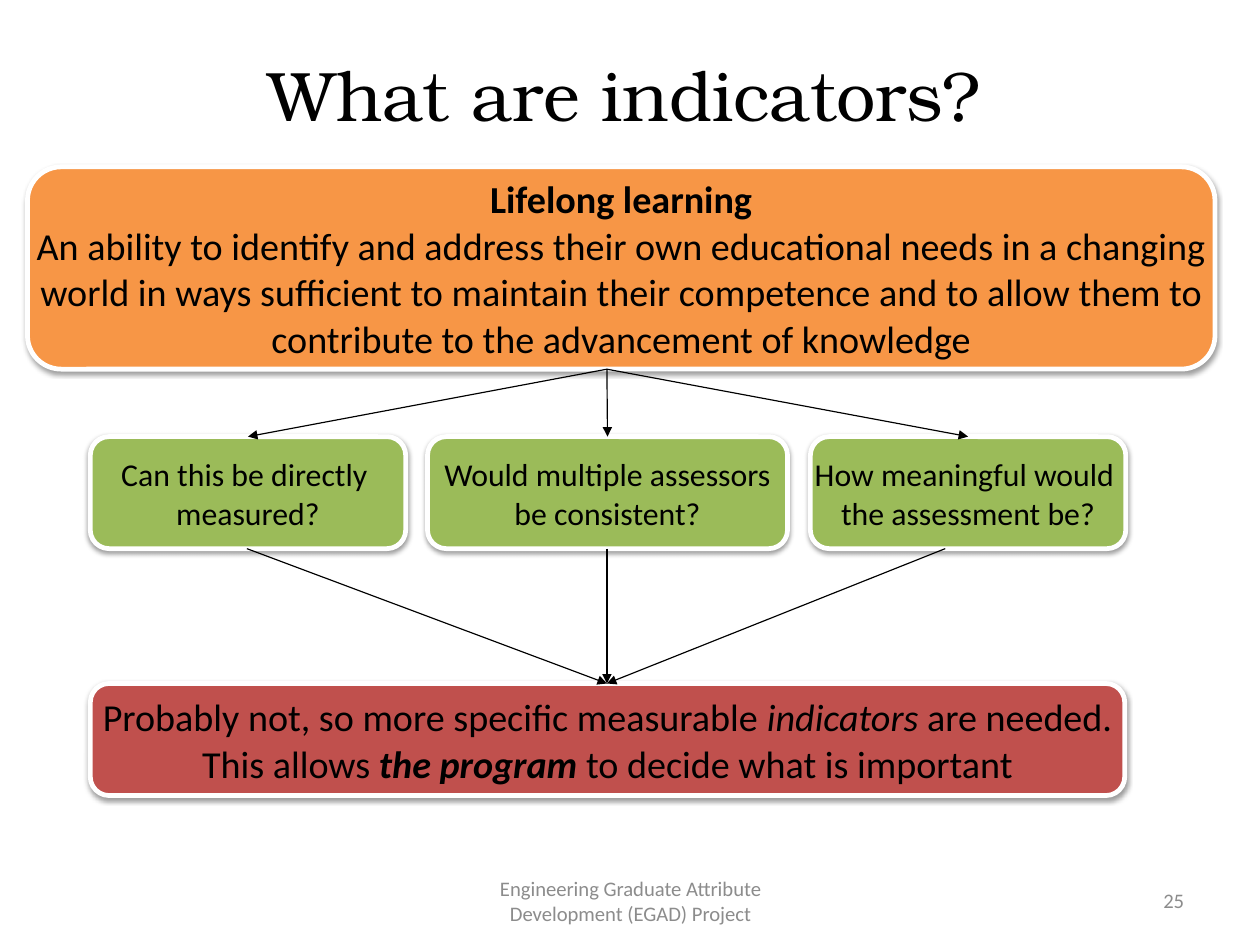
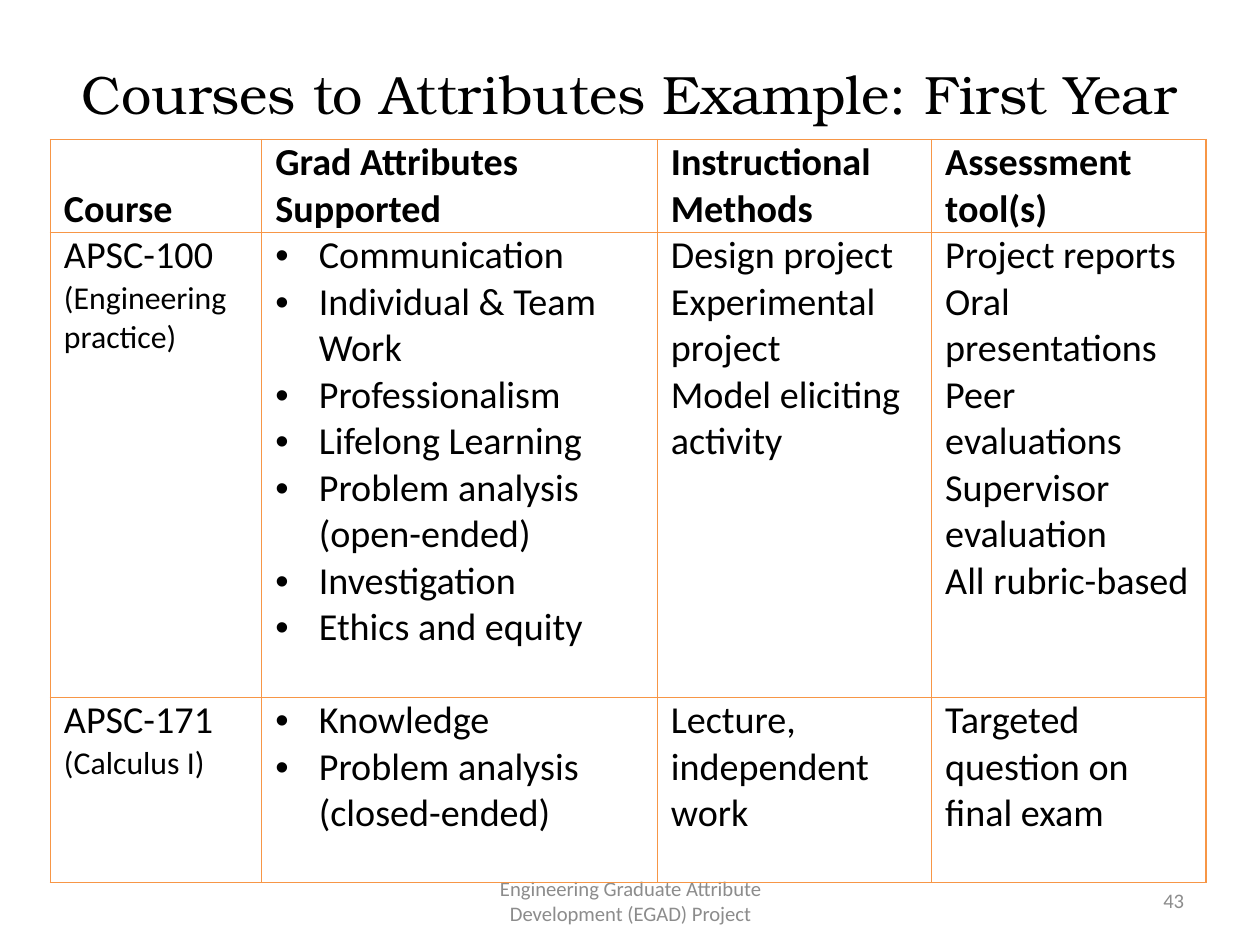
from dataclasses import dataclass

from lxml import etree
from pptx import Presentation
from pptx.dml.color import RGBColor
from pptx.enum import shapes, text
from pptx.oxml import ns
from pptx.util import Cm, Inches, Pt


@dataclass(frozen=True)
class Theme:
    ink: str = "000000"
    muted: str = "8C8C8C"
    white: str = "FFFFFF"
    orange: str = "F79646"
    green: str = "9BBB59"
    red: str = "C0504D"
    title_font: str = "TeX Gyre Bonum"
    body_font: str = "Calibri"
    body: int = 24
    small: int = 20
    footer: int = 13


T = Theme()
ALIGN = text.PP_ALIGN
ANCHOR = text.MSO_ANCHOR

FOOTER = "Engineering Graduate Attribute Development (EGAD) Project"

DEFINITION = [
    [("Lifelong learning", "b")],
    "An ability to identify and address their own educational needs in a changing",
    "world in ways sufficient to maintain their competence and to allow them to",
    "contribute to the advancement of knowledge",
]
QUESTIONS = [
    (0.79, 2.76, 2.16, ["Can this be directly ", "measured?"]),
    (3.74, 3.15, 5.31, ["Would multiple assessors", "be consistent?"]),
    (7.09, 2.76, 8.27, ["How meaningful would ", "the assessment be?"]),
]
ANSWER = [
    ["Probably not, so more specific measurable ", ("indicators", "i"), " are needed."],
    ["This allows ", ("the program", "bi"), " to decide what is important"],
]

HEADERS = ["Course", "Grad Attributes Supported", "Instructional Methods", "Assessment tool(s)"]
COURSES = [
    (
        [["APSC-100 ", ("(Engineering practice)", "s")]],
        ["Communication", "Individual & Team Work", "Professionalism", "Lifelong Learning",
         "Problem analysis (open-ended)", "Investigation", "Ethics and equity"],
        ["Design project", "Experimental project", "Model eliciting activity"],
        ["Project reports", "Oral presentations", "Peer evaluations",
         "Supervisor evaluation", "All rubric-based"],
    ),
    (
        [["APSC-171 ", ("(Calculus I)", "s")]],
        ["Knowledge", "Problem analysis (closed-ended)"],
        ["Lecture, independent work"],
        ["Targeted question on final exam"],
    ),
]
COLUMN_WIDTHS = [1.85, 3.46, 2.4, 2.4]
ROW_HEIGHTS = [0.81, 4.07, 1.62]
BULLET_COLUMN = 1


def rgb(value):
    return RGBColor.from_string(value)


def add_xml(parent, tag, **attrs):
    return etree.SubElement(parent, ns.qn(tag), attrs)


def set_margins(target, x, y):
    target.margin_left = target.margin_right = Inches(x)
    target.margin_top = target.margin_bottom = Inches(y)


def style_paragraph(p, size, color=T.ink, font=T.body_font, align=ALIGN.LEFT, bold=False):
    p.alignment = align
    p.font.size = Pt(size)
    p.font.name = font
    p.font.bold = bold
    p.font.color.rgb = rgb(color)


def add_bullet(p):
    pPr = p._p.get_or_add_pPr()
    indent = Inches(0.38)
    pPr.set("marL", str(indent))
    pPr.set("indent", str(-indent))
    add_xml(pPr, "a:buFont", typeface="Arial")
    add_xml(pPr, "a:buChar", char="•")


def write_lines(tf, lines, size, align=ALIGN.LEFT, bold=False, bullets=False, spacing=1.0):
    for i, line in enumerate(lines):
        p = tf.add_paragraph() if i else tf.paragraphs[0]
        p.line_spacing = spacing
        if bullets:
            add_bullet(p)
        style_paragraph(p, size, align=align, bold=bold)
        for part in [line] if isinstance(line, str) else line:
            words, marks = (part, "") if isinstance(part, str) else part
            r = p.add_run()
            r.text = words
            if "b" in marks:
                r.font.bold = True
            if "i" in marks:
                r.font.italic = True
            if "s" in marks:
                r.font.size = Pt(T.small)


def write_label(tf, words, **style):
    tf.word_wrap = True
    tf.auto_size = text.MSO_AUTO_SIZE.NONE
    tf.vertical_anchor = ANCHOR.MIDDLE
    set_margins(tf, 0.11, 0.06)
    p = tf.paragraphs[0]
    p.text = words
    style_paragraph(p, **style)


def add_slide(prs, title, title_box, title_size, number):
    s = prs.slides.add_slide(prs.slide_layouts[5])
    sp = s.shapes.title
    sp.left, sp.top, sp.width, sp.height = map(Inches, title_box)
    write_label(sp.text_frame, title, size=title_size, font=T.title_font, align=ALIGN.CENTER)
    for left, width, words, align in [(3.77, 3.49, FOOTER, ALIGN.CENTER),
                                      (7.9, 2.57, number, ALIGN.RIGHT)]:
        box = s.shapes.add_textbox(Inches(left), Inches(7.66), Inches(width), Inches(0.44))
        write_label(box.text_frame, words, size=T.footer, color=T.muted, align=align)
    return s


def add_card(s, left, top, width, height, fill, lines, size):
    sp = s.shapes.add_shape(shapes.MSO_SHAPE.ROUNDED_RECTANGLE,
                            *map(Inches, (left, top, width, height)))
    sp.fill.solid()
    sp.fill.fore_color.rgb = rgb(fill)
    sp.line.color.rgb = rgb(T.white)
    sp.line.width = Pt(3)
    sp.shadow.inherit = False
    effects = sp._element.spPr.find(ns.qn("a:effectLst"))
    shadow = add_xml(effects, "a:outerShdw", blurRad=str(Pt(3.1)), dist=str(Pt(1.6)),
                     dir="5400000", rotWithShape="0")
    add_xml(add_xml(shadow, "a:srgbClr", val=T.ink), "a:alpha", val="38000")
    tf = sp.text_frame
    tf.word_wrap = False
    tf.vertical_anchor = ANCHOR.MIDDLE
    set_margins(tf, 0.1, 0.05)
    write_lines(tf, lines, size, align=ALIGN.CENTER, spacing=1.02)


def add_arrow(s, x1, y1, x2, y2):
    c = s.shapes.add_connector(shapes.MSO_CONNECTOR.STRAIGHT, *map(Inches, (x1, y1, x2, y2)))
    c.line.color.rgb = rgb(T.ink)
    c.line.width = Pt(0.75)
    add_xml(c.line._get_or_add_ln(), "a:tailEnd", type="triangle")
    add_xml(c._element.spPr, "a:effectLst")


def set_borders(cell, color):
    tcPr = cell._tc.get_or_add_tcPr()
    for i, side in enumerate("LRTB"):
        ln = etree.Element(ns.qn("a:ln" + side), w=str(Pt(1)))
        add_xml(add_xml(ln, "a:solidFill"), "a:srgbClr", val=color)
        tcPr.insert(i, ln)


def build_indicators(prs):
    s = add_slide(prs, "What are indicators?", (0.51, 0.49, 9.92, 0.65), 44.1, "25")
    hub = 5.31
    card_height = 0.98
    definition_top, definition_height = 1.46, 1.77
    question_top, answer_top = 3.82, 5.98
    add_card(s, 0.24, definition_top, 10.39, definition_height, T.orange, DEFINITION, T.body)
    add_card(s, 0.79, answer_top, 9.05, card_height, T.red, ANSWER, T.body)
    for left, width, exit_x, lines in QUESTIONS:
        add_card(s, left, question_top, width, card_height, T.green, lines, T.small)
        add_arrow(s, hub, definition_top + definition_height, left + width / 2, question_top)
        add_arrow(s, exit_x, question_top + card_height, hub, answer_top)


def build_courses(prs):
    s = add_slide(prs, "Courses to Attributes Example: First Year",
                  (0.55, 0.33, 9.92, 0.97), 34, "43")
    rows = [[[header] for header in HEADERS], *COURSES]
    table = s.shapes.add_table(len(rows), len(HEADERS), Inches(0.44), Inches(1.22),
                               Inches(sum(COLUMN_WIDTHS)), Inches(sum(ROW_HEIGHTS))).table
    table.first_row = table.horz_banding = False
    for column, width in zip(table.columns, COLUMN_WIDTHS):
        column.width = Inches(width)
    for i, (row, height) in enumerate(zip(rows, ROW_HEIGHTS)):
        table.rows[i].height = Inches(height)
        is_header = i == 0
        for j, lines in enumerate(row):
            cell = table.cell(i, j)
            set_margins(cell, 0.12, 0)
            cell.vertical_anchor = ANCHOR.BOTTOM if is_header else ANCHOR.TOP
            cell.fill.background()
            set_borders(cell, T.orange)
            write_lines(cell.text_frame, lines, T.body, bold=is_header,
                        bullets=j == BULLET_COLUMN and not is_header)


def main():
    prs = Presentation()
    prs.slide_width, prs.slide_height = Cm(28), Cm(21)
    build_indicators(prs)
    build_courses(prs)
    prs.save("out.pptx")


if __name__ == "__main__":
    main()
